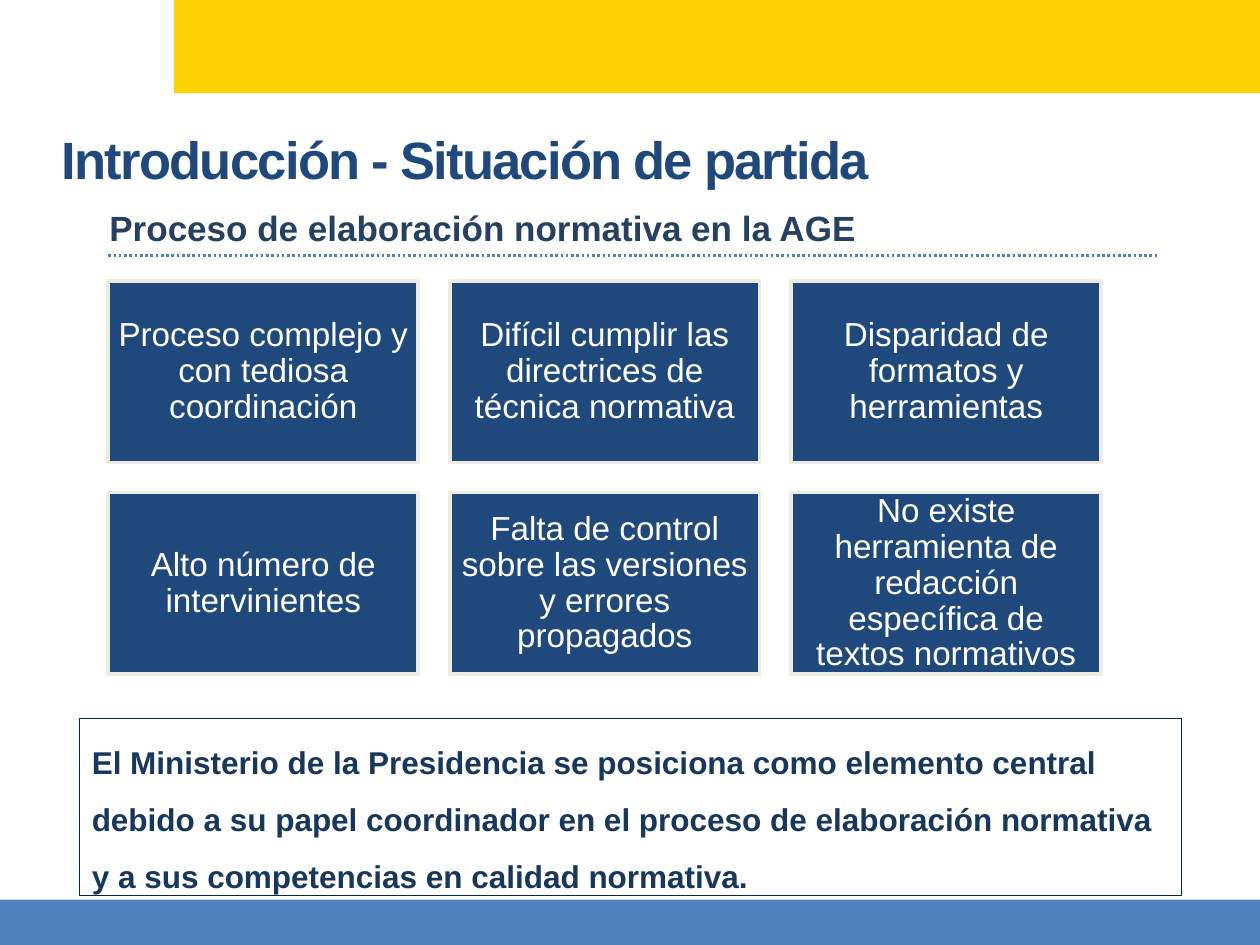
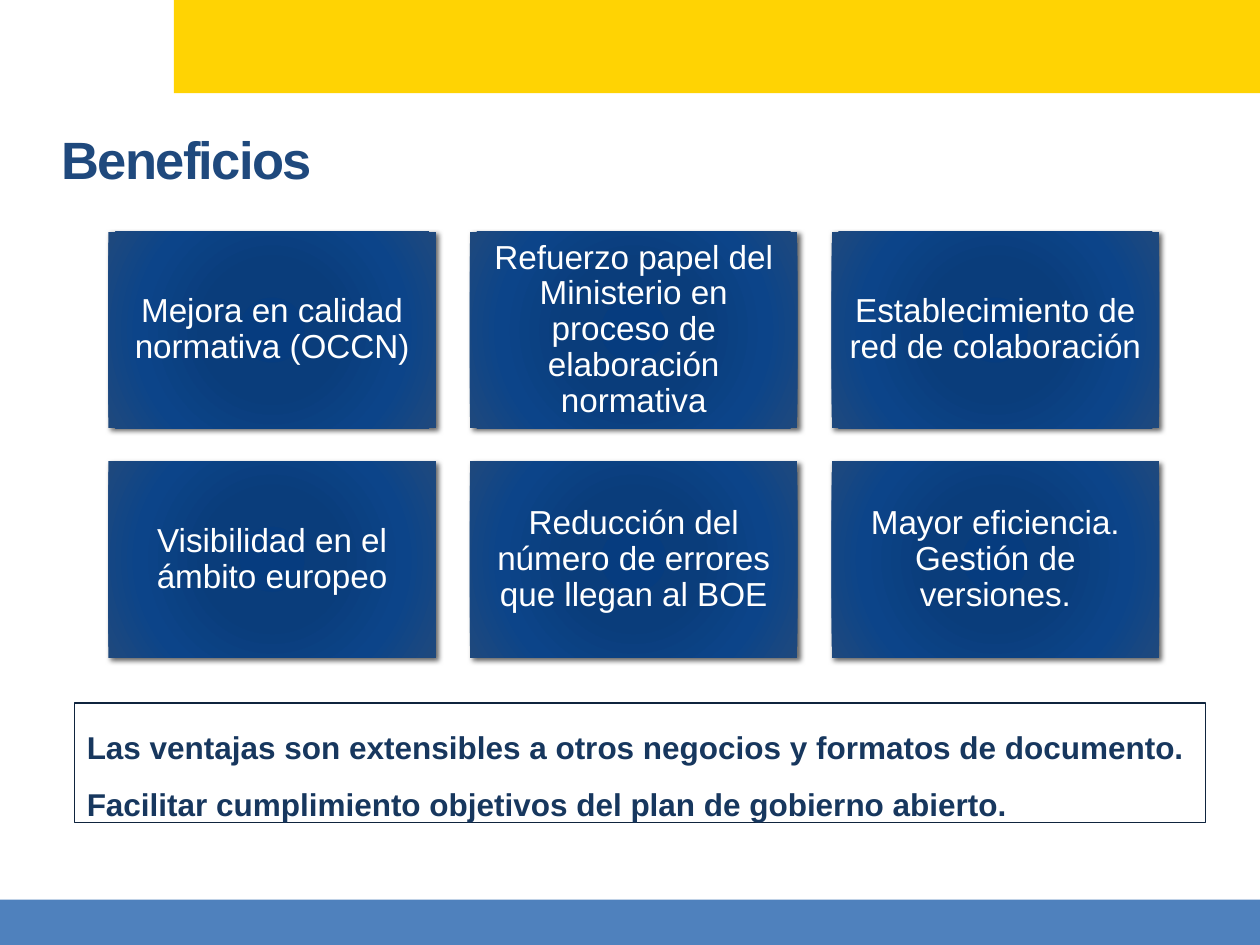
from lxml import etree
from pptx import Presentation
from pptx.dml.color import RGBColor
from pptx.enum.dml import MSO_LINE
from pptx.enum.shapes import MSO_CONNECTOR, MSO_SHAPE
from pptx.enum.text import MSO_ANCHOR, MSO_AUTO_SIZE, PP_ALIGN
from pptx.oxml import parse_xml
from pptx.oxml.ns import nsdecls, qn
from pptx.util import Inches, Pt

FONT = "Arial"
COLORS = {
    "footer": "4F81BD", "header": "FFD303", "title": "1F497D",
    "subtitle": "254061", "tile": "1F497D", "tile_border": "EEECE1",
    "tile_text": "FFFFFF", "note_text": "17375E", "note_border": "0F243E",
    "shadow": "000000",
}
TILE_GRADIENT = [(0, "063C7F"), (34, "0A3D7B"), (70, "0C4489"), (100, "1F497D")]

# Master bands: colour, (left, top, width, height)
BANDS = [("footer", (0, 7.14, 10, 0.36)), ("header", (1.38, 0, 8.62, 0.74))]
TITLE_BOX = (0.39, 0.92, 9.57, 0.67)
COLUMNS = 3

SLIDES = [
    {
        "title": "Introducción - Situación de partida",
        "subtitle": "Proceso de elaboración normativa en la AGE",
        "tiles": [
            "Proceso complejo y con tediosa coordinación",
            "Difícil cumplir las directrices de técnica normativa",
            "Disparidad de formatos y herramientas",
            "Alto número de intervinientes",
            "Falta de control sobre las versiones y errores propagados",
            "No existe herramienta de redacción específica de textos normativos",
        ],
        "origin": (0.86, 2.23), "tile_size": (2.46, 1.44), "gap": (0.25, 0.24),
        "gradient": False,
        "note": "El Ministerio de la Presidencia se posiciona como elemento central "
                "debido a su papel coordinador en el proceso de elaboración normativa "
                "y a sus competencias en calidad normativa.",
        "note_box": (0.63, 5.7, 8.75, 1.41),
    },
    {
        "title": "Beneficios",
        "subtitle": None,
        "tiles": [
            "Mejora en calidad normativa (OCCN)",
            "Refuerzo papel del Ministerio en proceso de elaboración normativa",
            "Establecimiento de red de colaboración",
            "Visibilidad en el ámbito europeo",
            "Reducción del número de errores que llegan al BOE",
            "Mayor eficiencia. Gestión de versiones.",
        ],
        "origin": (0.86, 1.84), "tile_size": (2.6, 1.56), "gap": (0.27, 0.26),
        "gradient": True,
        "note": "Las ventajas son extensibles a otros negocios y formatos de documento. "
                "Facilitar cumplimiento objetivos del plan de gobierno abierto.",
        "note_box": (0.59, 5.58, 8.98, 0.95),
    },
]


def rgb(name):
    return RGBColor.from_string(COLORS[name])


def inches(box):
    return [Inches(value) for value in box]


def write(shape, text, size, color, bold=False, align=PP_ALIGN.LEFT,
          anchor=MSO_ANCHOR.TOP, spacing=None):
    """Set one paragraph of text and format it; return its run."""
    frame = shape.text_frame
    frame.text = text
    frame.word_wrap = True
    frame.vertical_anchor = anchor
    paragraph = frame.paragraphs[0]
    paragraph.alignment = align
    paragraph.line_spacing = spacing
    run = paragraph.runs[0]
    run.font.name, run.font.size, run.font.bold = FONT, Pt(size), bold
    run.font.color.rgb = rgb(color)
    return run


def add_box(slide, box, fill=None, border=None, width=0.75):
    shape = slide.shapes.add_shape(MSO_SHAPE.RECTANGLE, *inches(box))
    shape.shadow.inherit = False
    if fill:
        shape.fill.solid()
        shape.fill.fore_color.rgb = rgb(fill)
    else:
        shape.fill.background()
    if border:
        shape.line.color.rgb = rgb(border)
        shape.line.width = Pt(width)
    else:
        shape.line.fill.background()
    return shape


def move_bands_to_master(presentation, slide):
    tree = presentation.slide_master.shapes.element
    for number, (color, box) in enumerate(BANDS):
        band = add_box(slide, box, color).element
        band.nvSpPr.cNvPr.set("id", str(100 + number))
        tree.insert(2 + number, band)


def add_gradient_and_shadow(shape):
    stops = "".join(
        f'<a:gs pos="{position * 1000}"><a:srgbClr val="{color}"/></a:gs>'
        for position, color in TILE_GRADIENT)
    gradient = parse_xml(
        f'<a:gradFill {nsdecls("a")} rotWithShape="1"><a:gsLst>{stops}</a:gsLst>'
        '<a:path path="circle"><a:fillToRect l="100000" t="100000" r="100000" '
        'b="100000"/></a:path></a:gradFill>')
    properties = shape.element.spPr
    properties.replace(properties.find(qn("a:noFill")), gradient)
    properties.find(qn("a:effectLst")).append(parse_xml(
        f'<a:outerShdw {nsdecls("a")} blurRad="{Pt(3)}" dist="{Pt(2)}" dir="2700000">'
        f'<a:srgbClr val="{COLORS["shadow"]}"><a:alpha val="60000"/></a:srgbClr>'
        '</a:outerShdw>'))


def add_title(slide, text):
    title = slide.shapes.title
    title.left, title.top, title.width, title.height = inches(TITLE_BOX)
    run = write(title, text, 30, "title", bold=True, anchor=MSO_ANCHOR.MIDDLE)
    run.font._element.set("spc", "-100")


def add_subtitle(slide, text):
    box = slide.shapes.add_textbox(*inches((0.77, 1.59, 7.13, 0.44)))
    write(box, text, 20, "subtitle", bold=True)
    rule = slide.shapes.add_connector(
        MSO_CONNECTOR.STRAIGHT, *inches((0.86, 2.03, 9.19, 2.03)))
    rule.line.color.rgb = rgb("footer")
    rule.line.width = Pt(1.5)
    rule.line.dash_style = MSO_LINE.ROUND_DOT
    etree.SubElement(rule.element.spPr, qn("a:effectLst"))


def add_tiles(slide, content):
    left, top = content["origin"]
    width, height = content["tile_size"]
    gap_x, gap_y = content["gap"]
    for index, text in enumerate(content["tiles"]):
        row, column = divmod(index, COLUMNS)
        box = (left + column * (width + gap_x), top + row * (height + gap_y),
               width, height)
        if content["gradient"]:
            tile = add_box(slide, box)
            add_gradient_and_shadow(tile)
        else:
            tile = add_box(slide, box, "tile", "tile_border", 2.08)
        frame = tile.text_frame
        frame.margin_left = frame.margin_right = Inches(0.08)
        frame.margin_top = frame.margin_bottom = Inches(0.08)
        write(tile, text, 19, "tile_text", align=PP_ALIGN.CENTER,
              anchor=MSO_ANCHOR.MIDDLE, spacing=0.9)


def add_note(slide, text, box):
    note = add_box(slide, box, border="note_border")
    write(note, text, 18, "note_text", bold=True, spacing=1.5)
    note.text_frame.auto_size = MSO_AUTO_SIZE.SHAPE_TO_FIT_TEXT


def main():
    presentation = Presentation()
    presentation.slide_width, presentation.slide_height = Inches(10), Inches(7.5)
    title_only = presentation.slide_layouts[5]
    for number, content in enumerate(SLIDES):
        slide = presentation.slides.add_slide(title_only)
        if number == 0:
            move_bands_to_master(presentation, slide)
        add_title(slide, content["title"])
        add_tiles(slide, content)
        if content["subtitle"]:
            add_subtitle(slide, content["subtitle"])
        add_note(slide, content["note"], content["note_box"])
    presentation.save("out.pptx")


if __name__ == "__main__":
    main()
